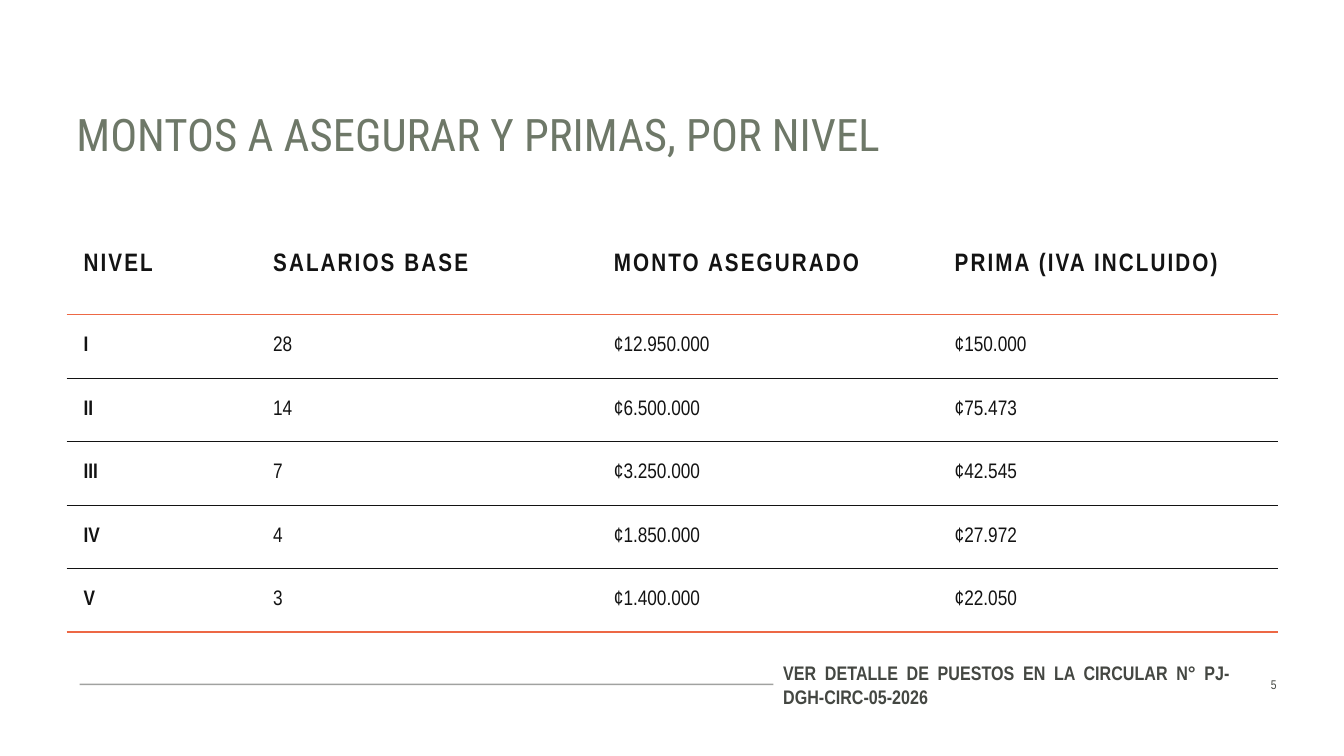
from dataclasses import dataclass

from lxml import etree
from pptx import Presentation, util as u
from pptx.dml.color import RGBColor
from pptx.enum import shapes, text
from pptx.oxml import ns
from pptx.util import Inches


@dataclass(frozen=True)
class Theme:
    paper: str = "FFFFFF"
    ink: str = "131313"
    accent: str = "ED6845"
    title: str = "6E7868"
    footer: str = "444742"
    title_font: str = "Roboto Condensed"
    body_font: str = "Arial Narrow"
    title_size: float = 32
    header_size: float = 18
    cell_size: float = 15
    note_size: float = 14
    number_size: float = 9
    thick: float = 1.5
    thin: float = 0.5


THEME = Theme()
HEADERS = ["NIVEL", "SALARIOS BASE", "MONTO ASEGURADO", "PRIMA (IVA INCLUIDO)"]
LEVELS = [
    ["I", "28", "¢12.950.000", "¢150.000"],
    ["II", "14", "¢6.500.000", "¢75.473"],
    ["III", "7", "¢3.250.000", "¢42.545"],
    ["IV", "4", "¢1.850.000", "¢27.972"],
    ["V", "3", "¢1.400.000", "¢22.050"],
]
COLUMN_WIDTHS = [1.88, 3.38, 3.38, 3.38]
HEADER_HEIGHT, LEVEL_HEIGHT = 0.98, 0.63


def rgb(color):
    return RGBColor.from_string(color)


def write(frame, words, *, size, color, font=THEME.body_font, bold=False,
          align=text.PP_ALIGN.LEFT, after=0, spacing=0):
    paragraph = frame.paragraphs[0]
    paragraph.alignment = align
    paragraph.space_after = u.Pt(after)
    run = paragraph.add_run()
    run.text = words
    run.font.name = font
    run.font.size = u.Pt(size)
    run.font.bold = bold
    run.font.color.rgb = rgb(color)
    if spacing:
        run.font._element.set("spc", str(int(spacing * 100)))


def add_title(slide, words):
    title = slide.shapes.add_textbox(Inches(0.66), Inches(0.29), Inches(12.01), Inches(1.45))
    frame = title.text_frame
    frame.word_wrap = True
    frame.vertical_anchor = text.MSO_ANCHOR.BOTTOM
    frame.margin_bottom = Inches(0.15)
    write(frame, words, size=THEME.title_size, color=THEME.title, font=THEME.title_font)


def add_footer_rule(slide):
    rule = slide.shapes.add_connector(
        shapes.MSO_CONNECTOR.STRAIGHT, Inches(12.61), Inches(6.79), Inches(0.79), Inches(6.79))
    rule.line.width = u.Pt(1)
    rule.line.color.rgb = rgb(THEME.footer)
    color = rule.line._ln.find(".//" + ns.qn("a:srgbClr"))
    etree.SubElement(color, ns.qn("a:alpha"), val="50000")
    etree.SubElement(rule._element.spPr, ns.qn("a:effectLst"))


def add_footer_box(slide, left, width, words, **style):
    box = slide.shapes.add_shape(
        shapes.MSO_SHAPE.RECTANGLE, Inches(left), Inches(6.59), Inches(width), Inches(0.4))
    box.shadow.inherit = False
    box.fill.solid()
    box.fill.fore_color.rgb = rgb(THEME.paper)
    box.line.fill.background()
    box.text_frame.word_wrap = True
    box.text_frame.vertical_anchor = text.MSO_ANCHOR.MIDDLE
    write(box.text_frame, words, color=THEME.footer, after=6, **style)


def set_borders(cell, top, bottom):
    """Each border is a (color, points) pair, or None for no line."""
    properties = cell._tc.get_or_add_tcPr()
    for side, border in (("L", None), ("R", None), ("T", top), ("B", bottom)):
        line = etree.SubElement(properties, ns.qn("a:ln" + side))
        if border is None:
            etree.SubElement(line, ns.qn("a:noFill"))
            continue
        color, points = border
        line.set("w", str(int(u.Pt(points))))
        fill = etree.SubElement(line, ns.qn("a:solidFill"))
        etree.SubElement(fill, ns.qn("a:srgbClr"), val=color)


def add_premium_table(slide):
    rows = [HEADERS] + LEVELS
    heights = [HEADER_HEIGHT] + [LEVEL_HEIGHT] * len(LEVELS)
    table = slide.shapes.add_table(
        len(rows), len(HEADERS), Inches(0.66), Inches(2.14),
        Inches(sum(COLUMN_WIDTHS)), Inches(sum(heights))).table
    table.horz_banding = False
    for column, width in zip(table.columns, COLUMN_WIDTHS):
        column.width = Inches(width)

    # Accent lines under the header and the last level, thin lines between levels
    accent, thin = (THEME.accent, THEME.thick), (THEME.ink, THEME.thin)
    edges = [None, accent] + [thin] * (len(LEVELS) - 1) + [accent]
    for r, (values, height) in enumerate(zip(rows, heights)):
        table.rows[r].height = Inches(height)
        is_header = r == 0
        for c, value in enumerate(values):
            cell = table.cell(r, c)
            cell.margin_left = cell.margin_right = Inches(0.17)
            cell.margin_top = cell.margin_bottom = Inches(0.17)
            cell.vertical_anchor = text.MSO_ANCHOR.MIDDLE
            set_borders(cell, edges[r], edges[r + 1])
            cell.fill.background()
            write(cell.text_frame, value, color=THEME.ink, bold=is_header or c == 0,
                  size=THEME.header_size if is_header else THEME.cell_size,
                  spacing=1.5 if is_header else 0)


def main():
    deck = Presentation()
    deck.slide_width, deck.slide_height = Inches(13.33), Inches(7.5)
    slide = deck.slides.add_slide(deck.slide_layouts[6])

    # Footer rule lies behind the footer boxes
    add_footer_rule(slide)
    add_title(slide, "MONTOS A ASEGURAR Y PRIMAS, POR NIVEL")

    # Footer note and slide number
    add_footer_box(slide, 7.67, 4.63, "VER DETALLE DE PUESTOS EN LA CIRCULAR N° PJ-DGH-CIRC-05-2026",
                   size=THEME.note_size, bold=True, align=text.PP_ALIGN.JUSTIFY)
    add_footer_box(slide, 12.29, 0.47, "5",
                   size=THEME.number_size, align=text.PP_ALIGN.RIGHT)

    # Amounts and premiums by level
    add_premium_table(slide)
    deck.save("out.pptx")


if __name__ == "__main__":
    main()
